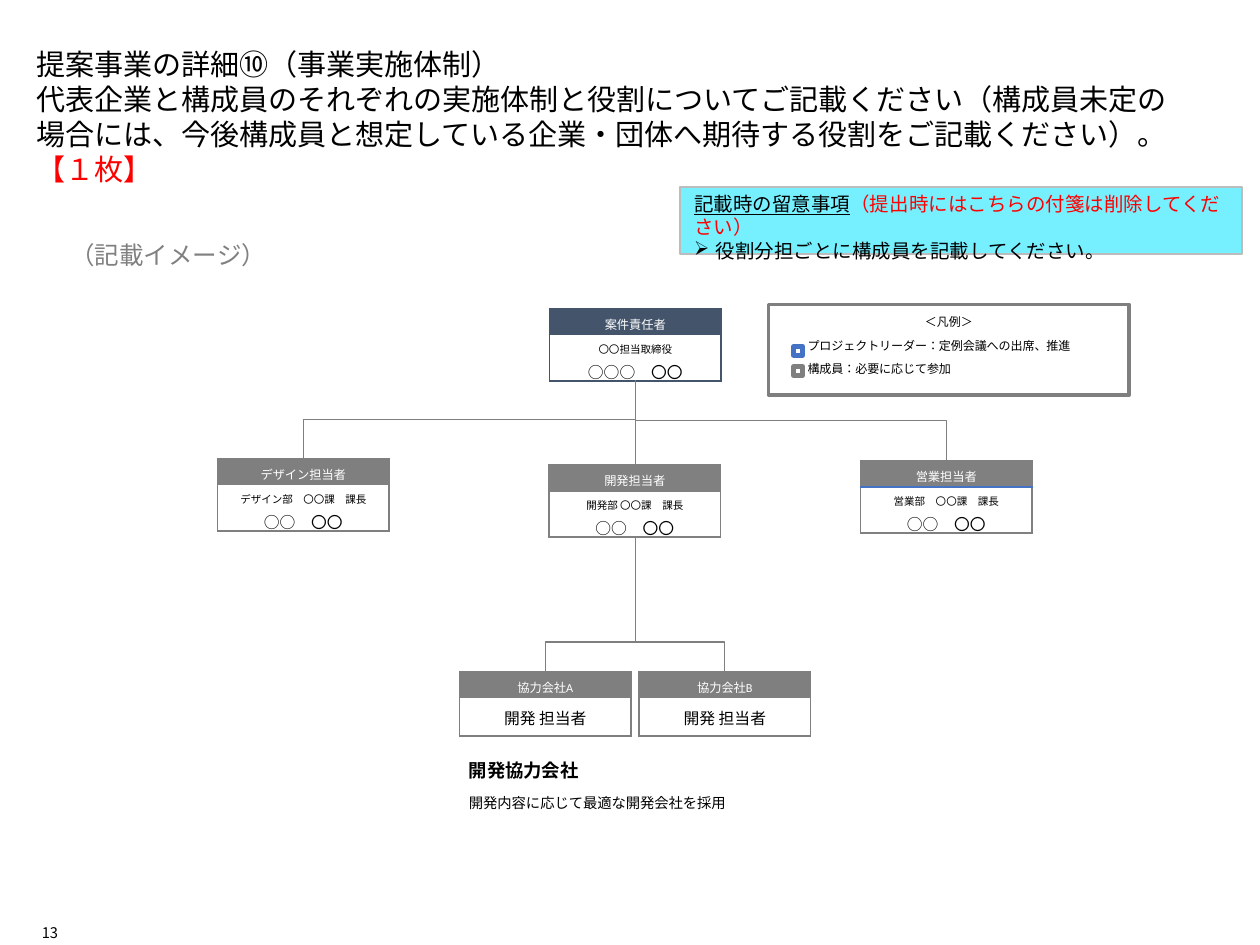
from lxml import etree
from pptx import Presentation
from pptx.dml.color import RGBColor
from pptx.enum import lang, shapes, text
from pptx.oxml import ns
from pptx.util import Pt

COLORS = {
    "black": "000000", "white": "FFFFFF", "red": "FF0000", "navy": "44546A",
    "blue": "4472C4", "gray": "7F7F7F", "label": "808080",
    "note": "76F0FF", "note_edge": "BBBCBC",
}
JP, LATIN = "Noto Sans CJK JP", "Calibri"
LEFT, CENTER, RIGHT = text.PP_ALIGN.LEFT, text.PP_ALIGN.CENTER, text.PP_ALIGN.RIGHT
TOP, MIDDLE, BOTTOM = text.MSO_ANCHOR.TOP, text.MSO_ANCHOR.MIDDLE, text.MSO_ANCHOR.BOTTOM
RECT = shapes.MSO_SHAPE.RECTANGLE
SINGLE, TABLE, LOOSE = 1.0, 1.1, 1.3  # line spacings

TITLE = [
    ("提案事業の詳細⑩（事業実施体制）\n代表企業と構成員のそれぞれの実施体制と役割についてご記載ください"
     "（構成員未定の場合には、今後構成員と想定している企業・団体へ期待する役割をご記載ください）。", {}),
    ("【１枚】", {"color": "red"}),
]
NOTE = [
    ("記載時の留意事項", {"underline": True}),
    ("（提出時にはこちらの付箋は削除してください）", {"color": "red"}),
]
NOTE_ITEM = "役割分担ごとに構成員を記載してください。"

CARD_W, HEAD_H, BODY_H, PARTNER_BODY_H = 98, 14.8, 26, 22
CARD_H = HEAD_H + BODY_H
# left, top, colour, line between head and body, role, post, name
LEAD = (314, 176.4, "navy", "navy", "案件責任者", "〇〇担当取締役", "○○○　〇〇")
STAFF = [
    (124.3, 262.2, "gray", "gray", "デザイン担当者", "デザイン部　〇〇課　課長", "○○　〇〇"),
    (313.7, 265.7, "label", "label", "開発担当者", "開発部 〇〇課　課長", "○○　〇〇"),
    (491.7, 263.5, "label", "blue", "営業担当者", "営業部　〇〇課　課長", "○○　〇〇"),
]
PARTNERS = ["協力会社A", "協力会社B"]
PARTNER_LEFT, PARTNER_TOP, PARTNER_STEP = 262.6, 383.7, 102.6
PARTNER_RISE = 18
LEGEND = [("プロジェクトリーダー：定例会議への出席、推進", "blue", 198, 189.4),
          ("構成員：必要に応じて参加", "gray", 209.5, 202.3)]

prs = Presentation()
prs.slide_width, prs.slide_height = Pt(720), Pt(540)
slide = prs.slides.add_slide(prs.slide_layouts[6])


def rgb(name):
    return RGBColor.from_string(COLORS[name])


def write(paragraph, runs, size, color="black", font=JP, align=LEFT,
          spacing=SINGLE, before=0, bold=False):
    """Fill a paragraph with a string or with (text, differences) runs."""
    paragraph.alignment, paragraph.line_spacing = align, spacing
    paragraph.space_before = Pt(before)
    style = paragraph.font
    style.size, style.bold, style.name = Pt(size), bold, font
    style.language_id = lang.MSO_LANGUAGE_ID.JAPANESE
    style.color.rgb = rgb(color)
    east_asian = etree.SubElement(style._element, ns.qn("a:ea"))
    east_asian.set("typeface", JP)
    for content, changes in [(runs, {})] if isinstance(runs, str) else runs:
        for i, part in enumerate(content.split("\n")):
            if i:
                paragraph.add_line_break()
            run = paragraph.add_run()
            run.text = part
            if "color" in changes:
                run.font.color.rgb = rgb(changes["color"])
            if "underline" in changes:
                run.font.underline = True


def add_arrow_bullet(paragraph, indent):
    properties = paragraph._p.get_or_add_pPr()
    properties.set("marL", str(Pt(indent)))
    properties.set("indent", str(Pt(-indent)))
    style = properties.find(ns.qn("a:defRPr"))
    style.addprevious(etree.Element(ns.qn("a:buFont"), typeface="Wingdings",
                                    pitchFamily="2", charset="2"))
    style.addprevious(etree.Element(ns.qn("a:buChar"), char="Ø"))


def set_frame(frame, insets, anchor=TOP, wrap=True):
    frame.word_wrap, frame.vertical_anchor = wrap, anchor
    (frame.margin_left, frame.margin_top,
     frame.margin_right, frame.margin_bottom) = map(Pt, insets)
    return frame


def add_text(box, runs, size, insets, anchor=TOP, wrap=True, **style):
    frame = slide.shapes.add_textbox(*map(Pt, box)).text_frame
    set_frame(frame, insets, anchor, wrap)
    write(frame.paragraphs[0], runs, size, **style)


def add_box(box, fill="white", line=None, width=1, kind=RECT):
    shape = slide.shapes.add_shape(kind, *map(Pt, box))
    shape.shadow.inherit = False
    shape.fill.solid()
    shape.fill.fore_color.rgb = rgb(fill)
    if line:
        shape.line.color.rgb, shape.line.width = rgb(line), Pt(width)
    else:
        shape.line.fill.background()
    return shape


def set_borders(cell, **sides):
    properties = cell._tc.get_or_add_tcPr()
    for i, side in enumerate("LRTB"):
        line = etree.Element(ns.qn("a:ln" + side), w=str(Pt(1)))
        fill = etree.SubElement(line, ns.qn("a:solidFill"))
        etree.SubElement(fill, ns.qn("a:srgbClr"), val=COLORS[sides[side]])
        properties.insert(i, line)


def add_card(left, top, color, divider, role, body, body_h=BODY_H, font=JP):
    """Draw a two-row table: role on colour, then (text, size) lines."""
    table = slide.shapes.add_table(
        2, 1, *map(Pt, (left, top, CARD_W, HEAD_H + body_h))).table
    table.first_row = table.horz_banding = False
    table.columns[0].width = Pt(CARD_W)
    rows = [(HEAD_H, color, "white", [(role, 7)], {"T": color, "B": divider}),
            (body_h, "white", "black", body, {"T": divider, "B": color})]
    for i, (height, fill, ink, lines, edges) in enumerate(rows):
        table.rows[i].height = Pt(height)
        cell = table.cell(i, 0)
        cell.fill.solid()
        cell.fill.fore_color.rgb = rgb(fill)
        cell.vertical_anchor = MIDDLE
        cell.margin_left = cell.margin_right = Pt(5.7)
        cell.margin_top = cell.margin_bottom = Pt(2.8)
        set_borders(cell, L=color, R=color, **edges)
        for n, (content, size) in enumerate(lines):
            frame = cell.text_frame
            paragraph = frame.add_paragraph() if n else frame.paragraphs[0]
            write(paragraph, content, size, ink, font, CENTER, TABLE, before=n)


def connect(start, end, kind=shapes.MSO_CONNECTOR.STRAIGHT):
    connector = slide.shapes.add_connector(kind, *map(Pt, start + end))
    connector.line.color.rgb, connector.line.width = rgb("gray"), Pt(0.75)
    etree.SubElement(connector._element.spPr, ns.qn("a:effectLst"))
    return connector


def connect_upright(start, end, bend=0.5):
    """Elbow that leaves vertically: a quarter-turned horizontal elbow."""
    middle_x, middle_y = (start[0] + end[0]) / 2, (start[1] + end[1]) / 2
    dx, dy = start[0] - middle_x, start[1] - middle_y
    elbow = connect((middle_x - dy, middle_y + dx), (middle_x + dy, middle_y - dx),
                    shapes.MSO_CONNECTOR.ELBOW)
    properties = elbow._element.spPr
    properties.find(ns.qn("a:xfrm")).set("rot", str(270 * 60000))
    guides = properties.find(ns.qn("a:prstGeom")).find(ns.qn("a:avLst"))
    etree.SubElement(guides, ns.qn("a:gd"), name="adj1",
                     fmla=f"val {round(bend * 100000)}")


add_text((18, 33.8, 656, 65.5), TITLE, 16.6, (2.8,) * 4, MIDDLE)

# Organisation chart
trunk_x = LEAD[0] + CARD_W / 2
lead_foot = (trunk_x, LEAD[1] + CARD_H)
for left, top, color, divider, role, post, name in [LEAD] + STAFF:
    add_card(left, top, color, divider, role, [(post, 6), (name, 9)])
design, develop, sales = [(card[0] + CARD_W / 2, card[1]) for card in STAFF]
connect_upright(lead_foot, design)
connect(lead_foot, (trunk_x, develop[1]))
connect_upright(lead_foot, sales)

# Partner companies
group = add_box((259.2, 372.2, 207.4, 97.2), kind=shapes.MSO_SHAPE.ROUNDED_RECTANGLE)
group.adjustments[0] = 0.08
caption = set_frame(group.text_frame, (6.5, 3.6, 6.5, 3.6), BOTTOM)
write(caption.paragraphs[0], "開発協力会社", 10.5, spacing=LOOSE, bold=True)
write(caption.add_paragraph(), "開発内容に応じて最適な開発会社を採用", 8.2,
      spacing=LOOSE, before=4.5)
for i, partner in enumerate(PARTNERS):
    add_card(PARTNER_LEFT + i * PARTNER_STEP, PARTNER_TOP, "gray", "gray", partner,
             [("開発 担当者", 9)], PARTNER_BODY_H, LATIN)
partner_x = PARTNER_LEFT + CARD_W / 2
connect_upright((partner_x + PARTNER_STEP, PARTNER_TOP + 1), (partner_x, PARTNER_TOP),
                bend=PARTNER_RISE)
connect((trunk_x, develop[1] + CARD_H), (trunk_x, PARTNER_TOP + 1 - PARTNER_RISE))

# Sticky note
note = set_frame(add_box((388.8, 107, 321, 38.3), "note", "note_edge").text_frame,
                 (7.9, 2.8, 2.8, 2.8))
write(note.paragraphs[0], NOTE, 11.1)
item = note.add_paragraph()
write(item, NOTE_ITEM, 11.1)
add_arrow_bullet(item, 12.2)

# Legend
legend = set_frame(add_box((439.2, 173.9, 206, 52), line="gray", width=2).text_frame,
                   (6.5, 3.6, 6.5, 3.6))
write(legend.paragraphs[0], "＜凡例＞", 6.8, align=CENTER, spacing=LOOSE)
for meaning, color, key_top, meaning_top in LEGEND:
    add_box((453.6, key_top, 5, 5), line=color, width=3)
    add_text((455, meaning_top, 237.6, 21.6), meaning, 6.9, (6.5,) * 4)

add_text((20.2, 524.9, 13, 13), "13", 8.4, (0,) * 4, BOTTOM, align=RIGHT)
add_text((33.1, 133.9, 127.4, 24.5), "（記載イメージ）", 14, (7.2, 3.6, 7.2, 3.6),
         wrap=False, color="label", font=LATIN)

prs.save("out.pptx")
